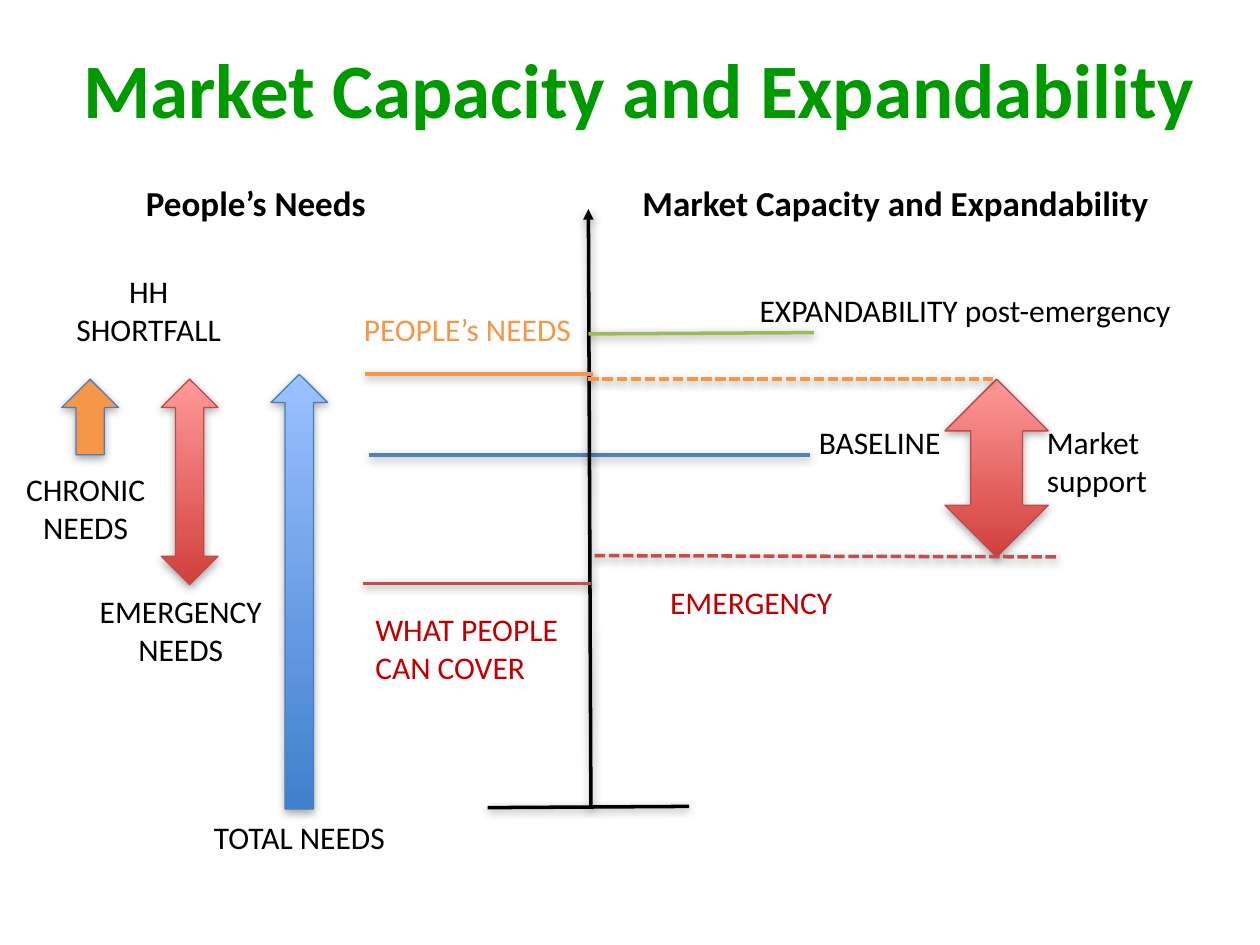
import pptx
import pptx.util
import pptx.dml.color
import pptx.enum.dml
import pptx.enum.shapes
import pptx.enum.text
import pptx.oxml
import pptx.oxml.ns
from lxml import etree

RGBColor = pptx.dml.color.RGBColor
SHAPES = pptx.enum.shapes.MSO_SHAPE
LEFT = pptx.enum.text.PP_ALIGN.LEFT
CENTER = pptx.enum.text.PP_ALIGN.CENTER

BLACK = RGBColor(0x00, 0x00, 0x00)
TITLE_GREEN = RGBColor(0x00, 0x99, 0x00)
GREEN = RGBColor(0x9B, 0xBB, 0x59)
ORANGE = RGBColor(0xF7, 0x96, 0x46)
BLUE = RGBColor(0x4F, 0x81, 0xBD)
BLUE_EDGE = RGBColor(0x4A, 0x7E, 0xBB)
BLUE_GRADIENT = (RGBColor(0x3F, 0x80, 0xCD), RGBColor(0x9B, 0xC1, 0xFF))
RED = RGBColor(0xC0, 0x50, 0x4D)
RED_TEXT = RGBColor(0xC0, 0x00, 0x00)
RED_EDGE = RGBColor(0xBE, 0x4B, 0x48)
RED_GRADIENT = (RGBColor(0xD1, 0x40, 0x3C), RGBColor(0xFF, 0x9A, 0x99))

# The slide is a grid of 100 columns and 75 rows
COLUMNS, ROWS = 100, 75
WIDTH, HEIGHT = pptx.util.Inches(10), pptx.util.Inches(7.5)
ONE_LINE, TWO_LINES, HEADING = 3.8, 6.7, 4.1
ARROW_WIDTH = 4.5


def place(box, column, row):
    """Slide position of a grid point counted from the corner of a box."""
    return (round((box[0] + column) * WIDTH / COLUMNS),
            round((box[1] + row) * HEIGHT / ROWS))


def add_shadow(shape, alpha, distance):
    properties = shape._element.spPr
    for old in properties.findall(pptx.oxml.ns.qn("a:effectLst")):
        properties.remove(old)
    properties.append(pptx.oxml.parse_xml(
        f'<a:effectLst {pptx.oxml.ns.nsdecls("a")}>'
        f'<a:outerShdw blurRad="63500" dist="{distance}" dir="5400000" rotWithShape="0">'
        f'<a:srgbClr val="000000"><a:alpha val="{alpha}000"/></a:srgbClr>'
        '</a:outerShdw></a:effectLst>'))


def add_text(slide, box, area, lines, color=BLACK, align=LEFT, size=18, bold=False):
    left, top = place(box, *area[:2])
    width, height = place((0, 0), *area[2:])
    frame = slide.shapes.add_textbox(left, top, width, height).text_frame
    frame.word_wrap = True
    frame.text = lines
    font_format = {"name": "Calibri", "size": pptx.util.Pt(size), "bold": bold}
    for paragraph in frame.paragraphs:
        paragraph.alignment = align
        for name, value in font_format.items():
            setattr(paragraph.font, name, value)
        paragraph.font.color.rgb = color


def add_line(slide, box, start, end, color, dashed=False, arrow=False):
    connector = slide.shapes.add_connector(
        pptx.enum.shapes.MSO_CONNECTOR.STRAIGHT, *place(box, *start), *place(box, *end))
    connector.line.color.rgb = color
    connector.line.width = pptx.util.Pt(2)
    if dashed:
        connector.line.dash_style = pptx.enum.dml.MSO_LINE.SQUARE_DOT
    if arrow:
        line_element = connector.line._get_or_add_ln()
        etree.SubElement(line_element, pptx.oxml.ns.qn("a:headEnd"), type="triangle")
    add_shadow(connector, 38, 20000)
    return connector


def add_arrow(slide, box, area, kind, colors, edge):
    left, top = place(box, *area[:2])
    width, height = place((0, 0), *area[2:])
    shape = slide.shapes.add_shape(kind, left, top, width, height)
    if len(colors) == 1:
        shape.fill.solid()
        shape.fill.fore_color.rgb = colors[0]
    else:
        shape.fill.gradient()
        shape.fill.gradient_angle = 90
        for stop, color in zip(shape.fill.gradient_stops, colors):
            stop.color.rgb = color
    shape.line.color.rgb = edge
    shape.line.width = pptx.util.Pt(0.75)
    add_shadow(shape, 35, 23000)
    return shape


def add_title(slide, box):
    add_text(slide, box, (0, 0, 92.9, 8.4), "Market Capacity and Expandability",
             TITLE_GREEN, CENTER, size=44, bold=True)


def add_needs_arrows(slide, box):
    """Left region: the kinds of need as vertical arrows."""
    add_text(slide, box, (9.6, 0, 19.7, HEADING), "People’s Needs", size=20, bold=True)
    for column, row, height, kind, colors, edge in (
            (3.9, 16.2, 6, SHAPES.UP_ARROW, (ORANGE,), BLUE_EDGE),
            (11.8, 16.2, 16.3, SHAPES.UP_DOWN_ARROW, RED_GRADIENT, RED_EDGE),
            (20.5, 15.8, 34.5, SHAPES.UP_ARROW, BLUE_GRADIENT, BLUE_EDGE)):
        add_arrow(slide, box, (column, row, ARROW_WIDTH, height), kind, colors, edge)
    for area, lines, align in (
            ((3.9, 7.2, 13.8, TWO_LINES), "HH\nSHORTFALL", CENTER),
            ((0, 22.9, 11.6, TWO_LINES), "CHRONIC\nNEEDS", CENTER),
            ((4.7, 32.6, 17.3, TWO_LINES), "EMERGENCY NEEDS", CENTER),
            ((15, 50.5, 17.3, ONE_LINE), "TOTAL NEEDS", LEFT)):
        add_text(slide, box, area, lines, align=align)


def add_axis(slide, box):
    """Middle: the foot, the baseline across both sides, and the axis."""
    add_line(slide, box, (9.9, 47.5), (25.9, 47.4), BLACK)
    add_line(slide, box, (0.5, 19.5), (35.5, 19.5), BLUE)
    add_line(slide, box, (17.9, 0), (18.1, 47.5), BLACK, arrow=True)


def add_needs_levels(slide, box):
    """Levels to the left of the axis."""
    add_line(slide, box, (1.2, 5.6), (19.3, 5.6), ORANGE)
    add_line(slide, box, (1, 22.2), (19.1, 22.2), RED)
    add_text(slide, box, (0, 0, 18.6, ONE_LINE), "PEOPLE’s NEEDS", ORANGE, CENTER)
    add_text(slide, box, (1, 23.8, 16.9, TWO_LINES), "WHAT PEOPLE CAN COVER", RED_TEXT)


def add_market(slide, box):
    """Right region: market levels and the gap that support closes."""
    add_text(slide, box, (3.3, 0, 47.2, HEADING), "Market Capacity and Expandability",
             size=20, bold=True)
    support = add_arrow(slide, box, (28.3, 16.2, 8.2, 14.1),
                        SHAPES.UP_DOWN_ARROW, RED_GRADIENT, RED_EDGE)
    add_line(slide, box, (0, 12.6), (17.9, 12.5), GREEN)
    needs = add_line(slide, box, (0, 16.2), (32.4, 16.2), ORANGE, dashed=True)
    needs.end_connect(support, 0)
    add_line(slide, box, (0.5, 30.2), (37.4, 30.3), RED, dashed=True)
    for area, lines, color in (
            ((12.6, 8.7, 36.1, ONE_LINE), "EXPANDABILITY post-emergency", BLACK),
            ((17.3, 19.2, 22.7, ONE_LINE), "BASELINE", BLACK),
            ((35.4, 19.2, 13.8, TWO_LINES), "Market support", BLACK),
            ((5.5, 31.9, 22.7, ONE_LINE), "EMERGENCY", RED_TEXT)):
        add_text(slide, box, area, lines, color)


def main():
    presentation = pptx.Presentation()
    presentation.slide_width, presentation.slide_height = WIDTH, HEIGHT
    slide = presentation.slides.add_slide(presentation.slide_layouts[6])
    # Each region gets its top left corner as column and row
    add_title(slide, (4.3, 2.8))
    add_needs_arrows(slide, (1, 13.9))
    add_axis(slide, (28.8, 16.6))
    add_needs_levels(slide, (27.8, 24.1))
    add_market(slide, (46.7, 13.9))
    presentation.save("out.pptx")


if __name__ == "__main__":
    main()
